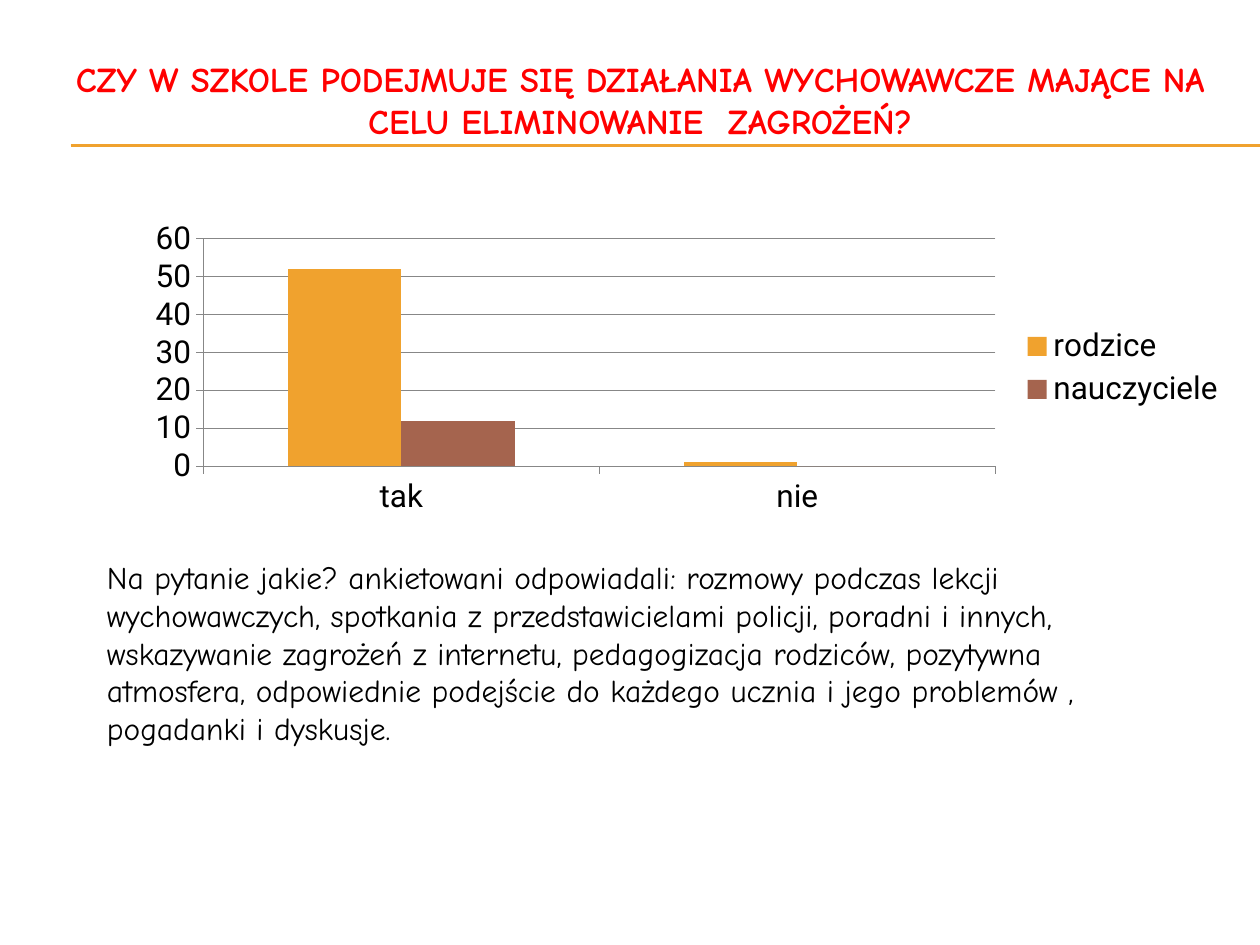
from lxml.etree import SubElement
from pptx import Presentation
from pptx.chart.data import CategoryChartData
from pptx.dml.color import RGBColor
from pptx.enum.chart import XL_CHART_TYPE as ChartType, XL_LEGEND_POSITION as LegendPos, XL_TICK_MARK as Tick
from pptx.enum.shapes import MSO_CONNECTOR as Connector
from pptx.enum.text import MSO_ANCHOR as Anchor, PP_ALIGN as Align
from pptx.oxml.ns import qn
from pptx.util import Inches, Pt

ORANGE = RGBColor(0xF0, 0xA2, 0x2E)
BROWN = RGBColor(0xA5, 0x64, 0x4E)
RED = RGBColor(0xFF, 0x00, 0x00)
BLACK = RGBColor(0x00, 0x00, 0x00)
GREY = RGBColor(0x87, 0x87, 0x87)
TEXT_FONT, CHART_FONT = "Comic Neue", "Roboto"

TITLE = "CZY W SZKOLE PODEJMUJE SIĘ DZIAŁANIA WYCHOWAWCZE MAJĄCE NA CELU ELIMINOWANIE  ZAGROŻEŃ?"
ANSWERS = (
    "Na pytanie jakie? ankietowani odpowiadali: rozmowy podczas lekcji wychowawczych, "
    "spotkania z przedstawicielami policji, poradni i innych, wskazywanie zagrożeń z internetu, "
    "pedagogizacja rodziców, pozytywna atmosfera, odpowiednie podejście do każdego ucznia "
    "i jego problemów , pogadanki i dyskusje."
)
CATEGORIES = ["tak", "nie"]
SERIES = [("rodzice", (52, 1), ORANGE), ("nauczyciele", (12, 0), BROWN)]


def style_font(font, name, size, color=BLACK, bold=False):
    """Set the typeface, size, colour and weight of a font."""
    font.name, font.size, font.bold = name, Pt(size), bold
    font.color.rgb = color


def add_rule(slide, left, right, y):
    """Draw a thin horizontal rule."""
    ln = slide.shapes.add_connector(
        Connector.STRAIGHT, Inches(left), Inches(y), Inches(right), Inches(y))
    ln.line.color.rgb, ln.line.width = ORANGE, Pt(0.75)
    SubElement(ln._element.spPr, qn("a:effectLst"))


def add_text(slide, box, text, size, color=BLACK, bold=False, align=Align.LEFT):
    """Add a wrapped one-paragraph text box and return its frame."""
    tf = slide.shapes.add_textbox(*map(Inches, box)).text_frame
    tf.word_wrap = True
    p = tf.paragraphs[0]
    p.text, p.alignment = text, align
    style_font(p.font, TEXT_FONT, size, color, bold)
    return tf


def add_column_chart(slide, box):
    """Add the clustered columns with a legend on the right."""
    data = CategoryChartData()
    data.categories = CATEGORIES
    for name, values, _ in SERIES:
        data.add_series(name, values)
    chart = slide.shapes.add_chart(
        ChartType.COLUMN_CLUSTERED, *map(Inches, box), data).chart
    style_font(chart.font, CHART_FONT, 18)
    chart.has_title = False
    chart.has_legend = True
    chart.legend.position = LegendPos.RIGHT
    chart.legend.include_in_layout = False

    plot = chart.plots[0]
    plot.gap_width, plot.overlap, plot.vary_by_categories = 150, 0, False
    for series, (_, _, color) in zip(plot.series, SERIES):
        series.format.fill.solid()
        series.format.fill.fore_color.rgb = color

    for axis in (chart.category_axis, chart.value_axis):
        axis.major_tick_mark = Tick.OUTSIDE
        axis.minor_tick_mark = Tick.NONE
        axis.format.line.color.rgb = GREY
    axis = chart.value_axis
    axis.minimum_scale, axis.maximum_scale, axis.major_unit = 0, 60, 10
    axis.has_major_gridlines = True
    axis.major_gridlines.format.line.color.rgb = GREY


def main():
    """Build the survey slide and save it."""
    prs = Presentation()
    prs.slide_width, prs.slide_height = Inches(10), Inches(7.5)
    slide = prs.slides.add_slide(prs.slide_layouts[6])

    for y in (1.15, 1.16):
        add_rule(slide, 0.56, 10, y)
    tf = add_text(slide, (0.33, 0.68, 9.5, 0.74), TITLE, 19.8, RED, True, Align.CENTER)
    tf.vertical_anchor = Anchor.BOTTOM
    tf.margin_top, tf.margin_bottom = 0, Inches(0.3)
    add_column_chart(slide, (1.06, 1.7, 8.77, 2.44))
    add_text(slide, (0.75, 4.38, 8.11, 1.62), ANSWERS, 18)

    prs.save("out.pptx")


if __name__ == "__main__":
    main()
